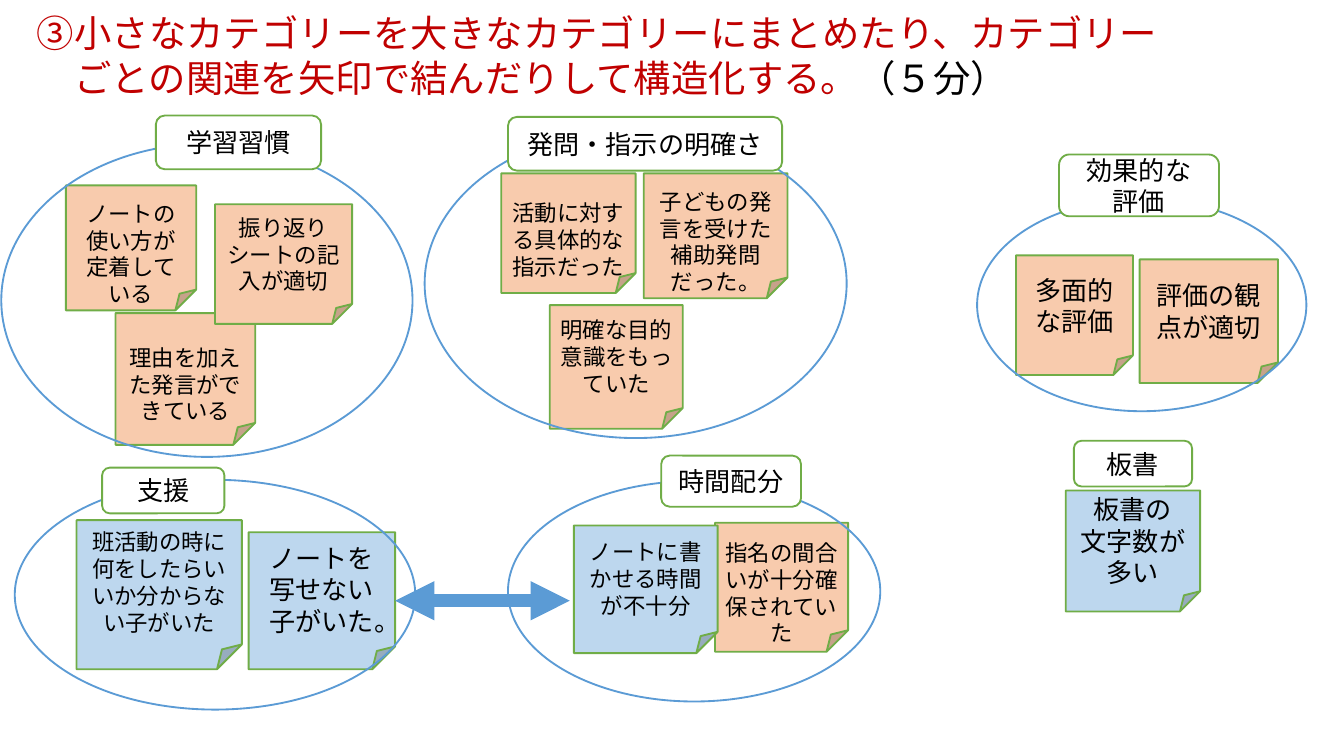
from lxml.etree import SubElement
from pptx import Presentation
from pptx.dml.color import RGBColor
from pptx.enum.lang import MSO_LANGUAGE_ID
from pptx.enum.shapes import MSO_CONNECTOR, MSO_SHAPE
from pptx.enum.text import MSO_ANCHOR, PP_ALIGN
from pptx.oxml.ns import qn
from pptx.util import Inches, Pt

ORANGE = RGBColor(0xF8, 0xCB, 0xAD)
PALE_BLUE = RGBColor(0xBD, 0xD7, 0xEE)
BLUE = RGBColor(0x5B, 0x9B, 0xD5)
GREEN = RGBColor(0x70, 0xAD, 0x47)
RED = RGBColor(0xC0, 0x00, 0x00)
BLACK = RGBColor(0, 0, 0)
WHITE = RGBColor(255, 255, 255)
JAPANESE_FONT = "Noto Sans CJK JP"
LABEL_FONT = "Calibri"


class CategoryMap:
    """Holds the style and the slide, and adds each kind of element."""

    def __init__(self, slide):
        self.slide = slide

    def add_span(self, para, text, size, color=BLACK, font=JAPANESE_FONT):
        span = para.add_run()
        span.text = text
        span.font.size = Pt(size)
        span.font.name = font
        span.font.color.rgb = color
        span.font.language_id = MSO_LANGUAGE_ID.JAPANESE
        latin = span.font._element.find(qn("a:latin"))
        east_asian = latin.makeelement(qn("a:ea"), {"typeface": JAPANESE_FONT})
        latin.addnext(east_asian)

    def set_frame(self, frame, drop=0):
        frame.word_wrap = True
        frame.margin_left = frame.margin_right = Pt(5.4)
        frame.margin_top = Pt(2.7) + Inches(drop)
        frame.margin_bottom = Pt(2.7)

    def add_box(self, kind, place, fill, line):
        box = self.slide.shapes.add_shape(kind, *map(Inches, place))
        box.shadow.inherit = False
        if fill is None:
            box.fill.background()
        else:
            box.fill.solid()
            box.fill.fore_color.rgb = fill
        box.line.color.rgb = line
        box.line.width = Pt(1)
        return box

    def fill_text(self, box, lines, size, font=JAPANESE_FONT, drop=0):
        frame = box.text_frame
        self.set_frame(frame, drop)
        frame.vertical_anchor = MSO_ANCHOR.MIDDLE
        for index, line in enumerate(lines):
            para = frame.add_paragraph() if index else frame.paragraphs[0]
            para.alignment = PP_ALIGN.CENTER
            self.add_span(para, line, size, font=font)

    def add_note(self, place, color, lines, size=12, drop=0):
        box = self.add_box(MSO_SHAPE.FOLDED_CORNER, place, color, GREEN)
        self.fill_text(box, lines, size, drop=drop)

    def add_label(self, place, lines, font=LABEL_FONT):
        box = self.add_box(MSO_SHAPE.ROUNDED_RECTANGLE, place, WHITE, GREEN)
        self.fill_text(box, lines, 14, font)

    def add_ring(self, place):
        self.add_box(MSO_SHAPE.OVAL, place, None, BLUE)

    def add_double_arrow(self, start, end):
        arrow = self.slide.shapes.add_connector(
            MSO_CONNECTOR.STRAIGHT, *map(Inches, start + end))
        arrow.line.color.rgb = BLUE
        arrow.line.width = Pt(7)
        line = arrow.line._get_or_add_ln()
        for tip in ("a:headEnd", "a:tailEnd"):
            SubElement(line, qn(tip), type="triangle")
        SubElement(arrow._element.spPr, qn("a:effectLst"))

    def add_title(self, place, lines):
        box = self.slide.shapes.add_textbox(*map(Inches, place))
        frame = box.text_frame
        self.set_frame(frame)
        for index, spans in enumerate(lines):
            para = frame.add_paragraph() if index else frame.paragraphs[0]
            for text, color in spans:
                self.add_span(para, text, 20, color)


def main():
    # Slide in 16:9
    deck = Presentation()
    deck.slide_width, deck.slide_height = Inches(10), Inches(10 * 9 / 16)
    page = CategoryMap(deck.slides.add_slide(deck.slide_layouts[6]))

    # Sticky notes; a drop lowers the text by about half a line
    drop = 0.24
    for place, color, lines, size, lowered in (
        ((0.49, 1.38, 0.97, 0.93), ORANGE, ["ノートの使い方が定着している"], 12, drop),
        ((0.86, 2.33, 1.04, 0.98), ORANGE, ["理由を加えた発言ができている"], 12, drop),
        ((1.6, 1.52, 1.02, 0.89), ORANGE, ["振り返りシートの記入が適切"], 12, 0),
        ((3.73, 1.29, 1, 0.89), ORANGE, ["活動に対する具体的な指示だった"], 12, drop),
        ((4.79, 1.29, 1.07, 0.93), ORANGE, ["子どもの発言を受けた補助発問だった。"], 12, drop),
        ((4.09, 2.27, 0.99, 0.92), ORANGE, ["明確な目的意識をもっていた"], 12, 0),
        ((7.56, 1.9, 0.87, 0.89), ORANGE, ["多面的な評価"], 14, 0),
        ((8.48, 1.93, 1.03, 0.92), ORANGE, ["評価の観点が適切"], 14, 0),
        ((0.57, 3.87, 1.23, 1.11), PALE_BLUE,
         ["班活動の時に何をしたらいいか分からない子がいた"], 12, 0),
        ((1.85, 3.96, 1.09, 1.02), PALE_BLUE, ["ノートを写せない子がいた。"], 14, 0),
        ((5.32, 3.89, 0.99, 0.96), ORANGE, ["指名の間合いが十分確保されていた"], 12, drop),
        ((4.27, 3.91, 1.07, 0.95), PALE_BLUE, ["ノートに書かせる時間が不十分"], 12, 0),
        ((7.93, 3.65, 1, 0.9), PALE_BLUE, ["板書の", "文字数が", "多い"], 14, 0),
    ):
        page.add_note(place, color, lines, size, lowered)

    # Rings around the categories
    for place in (
        (0.01, 1.07, 3.06, 2.33),
        (3.16, 0.96, 3.14, 2.3),
        (7.27, 1.48, 2.45, 1.58),
        (0.11, 3.57, 2.98, 1.71),
        (3.78, 3.58, 2.77, 1.64),
    ):
        page.add_ring(place)

    # Relation between support and time allocation
    page.add_double_arrow((2.94, 4.47), (4.24, 4.47))

    # Category labels
    page.add_label((1.16, 0.86, 1.23, 0.4), ["学習習慣"])
    page.add_label((3.78, 0.87, 2.04, 0.4), ["発問・指示の明確さ"], JAPANESE_FONT)
    page.add_label((7.88, 1.15, 1.19, 0.46), ["効果的な", "評価"])
    page.add_label((0.76, 3.48, 0.91, 0.34), ["支援"])
    page.add_label((4.92, 3.39, 1.04, 0.38), ["時間配分"])
    page.add_label((7.99, 3.28, 0.88, 0.34), ["板書"])

    # Title
    page.add_title((0.2, 0.04, 9.18, 0.75), (
        [("③小さなカテゴリーを大きなカテゴリーにまとめたり、カテゴリー", RED)],
        [("　ごとの関連を矢印で結んだりして構造化する。", RED), ("（５分）", BLACK)],
    ))

    deck.save("out.pptx")


if __name__ == "__main__":
    main()
